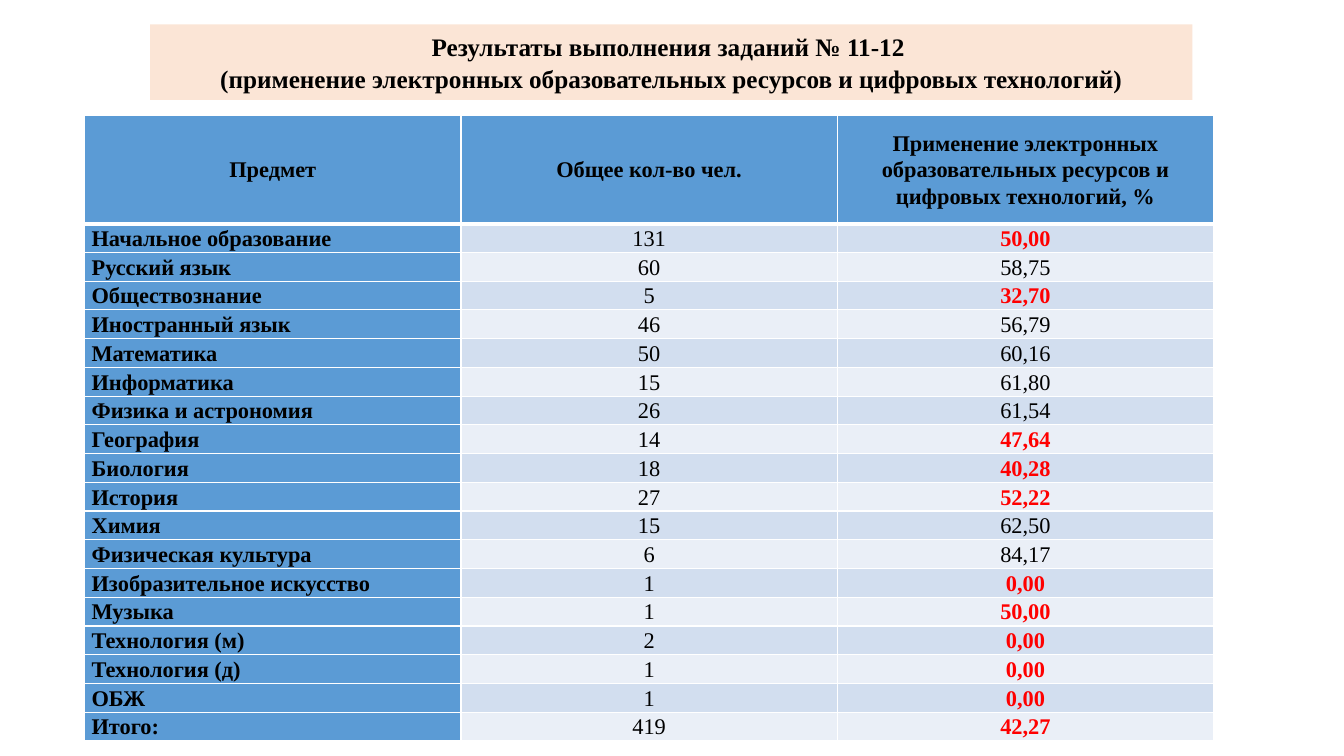
from lxml import etree
from pptx import Presentation
from pptx.dml.color import RGBColor
from pptx.enum.shapes import MSO_SHAPE
from pptx.enum.text import MSO_ANCHOR, PP_ALIGN
from pptx.oxml.ns import qn
from pptx.util import Pt

RECTANGLE = MSO_SHAPE.RECTANGLE
TOP, MIDDLE = MSO_ANCHOR.TOP, MSO_ANCHOR.MIDDLE
LEFT, CENTER = PP_ALIGN.LEFT, PP_ALIGN.CENTER

FONT = "Times New Roman"
BLACK, RED, WHITE = "000000", "FF0000", "FFFFFF"
PEACH, BLUE = "FBE5D6", "5B9BD5"
BANDS = ("D2DEEF", "EAEFF7")
LINE_SPACING = 1.07
LOW_RESULT = 55  # percentages below this are highlighted

TITLE = [
    "Результаты выполнения заданий № 11-12 ",
    "(применение электронных образовательных ресурсов и цифровых технологий)",
]
HEADINGS = (
    "Предмет",
    "Общее кол-во чел.",
    "Применение электронных образовательных ресурсов и цифровых технологий, %",
)
RESULTS = [
    ("Начальное образование", 131, 50.00),
    ("Русский язык", 60, 58.75),
    ("Обществознание", 5, 32.70),
    ("Иностранный язык", 46, 56.79),
    ("Математика", 50, 60.16),
    ("Информатика", 15, 61.80),
    ("Физика и астрономия", 26, 61.54),
    ("География", 14, 47.64),
    ("Биология", 18, 40.28),
    ("История", 27, 52.22),
    ("Химия", 15, 62.50),
    ("Физическая культура", 6, 84.17),
    ("Изобразительное искусство", 1, 0.00),
    ("Музыка", 1, 50.00),
    ("Технология (м)", 2, 0.00),
    ("Технология (д)", 1, 0.00),
    ("ОБЖ", 1, 0.00),
    ("Итого:", 419, 42.27),
]


def rgb(color):
    return RGBColor.from_string(color)


def paint(part, color):
    part.fill.solid()
    part.fill.fore_color.rgb = rgb(color)


def write(paragraph, text, size, color=BLACK, bold=True, align=CENTER):
    paragraph.text = text
    paragraph.alignment = align
    paragraph.line_spacing = LINE_SPACING
    for run in paragraph.runs:
        run.font.name = FONT
        run.font.size = Pt(size)
        run.font.bold = bold
        run.font.color.rgb = rgb(color)


def add_borders(cell, top=1, bottom=1):
    properties = cell._tc.get_or_add_tcPr()
    for side, width in (("L", 1), ("R", 1), ("T", top), ("B", bottom)):
        line = etree.SubElement(properties, qn(f"a:ln{side}"), w=str(Pt(width)))
        fill = etree.SubElement(line, qn("a:solidFill"))
        etree.SubElement(fill, qn("a:srgbClr"), val=WHITE)


def fill_cell(cell, text, background, top=1, bottom=1, **style):
    add_borders(cell, top, bottom)
    paint(cell, background)
    cell.vertical_anchor = MIDDLE
    cell.margin_left = cell.margin_right = Pt(5)
    cell.margin_top = cell.margin_bottom = 0
    write(cell.text_frame.paragraphs[0], text, 16, **style)


def add_title(slide, left, top, width, height):
    banner = slide.shapes.add_shape(
        RECTANGLE, Pt(left), Pt(top), Pt(width), Pt(height))
    banner.shadow.inherit = False
    banner.line.fill.background()
    paint(banner, PEACH)
    frame = banner.text_frame
    frame.word_wrap = True
    frame.vertical_anchor = TOP
    frame.text = "\n".join(TITLE)
    for paragraph, line in zip(frame.paragraphs, TITLE):
        write(paragraph, line, 18)


def add_results(slide, left, top, width, height):
    header_height = 77.5
    row_height = (height - header_height) / len(RESULTS)
    table = slide.shapes.add_table(
        len(RESULTS) + 1, len(HEADINGS),
        Pt(left), Pt(top), Pt(width), Pt(height)).table
    for column in table.columns:
        column.width = Pt(width / len(HEADINGS))
    for row in table.rows:
        row.height = Pt(row_height)
    table.rows[0].height = Pt(header_height)

    # Header row, closed by a thicker rule
    for column, heading in enumerate(HEADINGS):
        fill_cell(table.cell(0, column), heading, BLUE, bottom=3)

    # One row per subject
    for row, (subject, people, percent) in enumerate(RESULTS, start=1):
        band = BANDS[(row - 1) % 2]
        rule = 3 if row == 1 else 1
        low = percent < LOW_RESULT
        fill_cell(table.cell(row, 0), subject, BLUE, top=rule, align=LEFT)
        fill_cell(table.cell(row, 1), str(people), band, top=rule, bold=False)
        fill_cell(table.cell(row, 2), f"{percent:.2f}".replace(".", ","), band,
                  top=rule, color=RED if low else BLACK, bold=low)


def main():
    presentation = Presentation()
    presentation.slide_width = Pt(960)
    presentation.slide_height = Pt(540)
    slide = presentation.slides.add_slide(presentation.slide_layouts[6])
    add_title(slide, 107.3, 17.4, 744.5, 54)
    add_results(slide, 60.5, 82.3, 806.4, 447.1)
    presentation.save("out.pptx")


if __name__ == "__main__":
    main()
